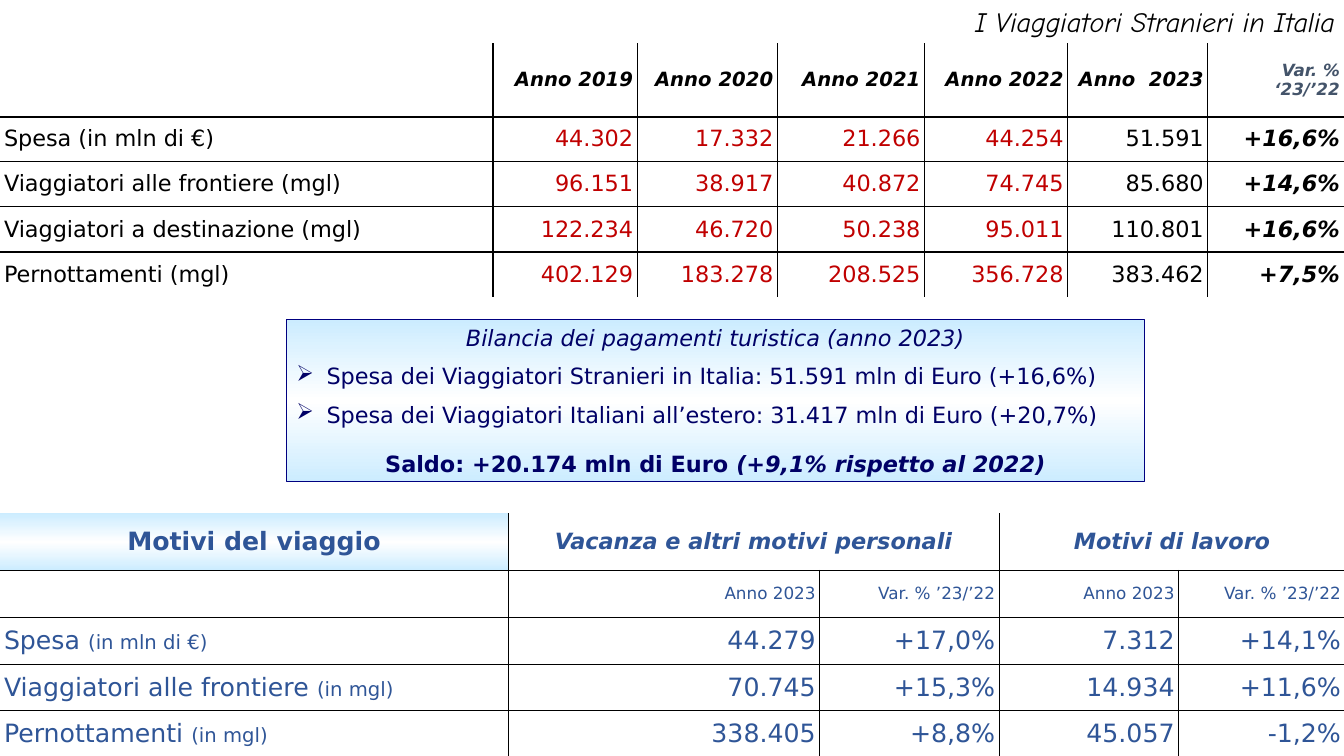
import copy
from dataclasses import dataclass

import lxml.etree
import pptx
import pptx.dml.color
import pptx.enum.shapes
import pptx.enum.text
import pptx.oxml
import pptx.oxml.ns
import pptx.util

Inches, Pt = pptx.util.Inches, pptx.util.Pt
RGB = pptx.dml.color.RGBColor.from_string
ALIGN = pptx.enum.text.PP_ALIGN
ANCHOR = pptx.enum.text.MSO_ANCHOR
FIT = pptx.enum.text.MSO_AUTO_SIZE
qn = pptx.oxml.ns.qn


@dataclass(frozen=True)
class Theme:
    font: str = "DejaVu Sans"
    script: str = "Comic Neue"
    black: str = "000000"
    red: str = "C00000"
    slate: str = "44546A"
    blue: str = "2F5597"
    navy: str = "000066"
    edge: str = "000080"
    pale: str = "CCECFF"
    white: str = "FFFFFF"
    title: int = 20
    large: int = 18
    body: int = 16
    note: int = 14
    small: int = 12
    rule: float = 0.96


T = Theme()
NO_STYLE = "{2D5ABB26-0587-4C30-8999-92F81FD0307C}"


def add_run(para, text, size, color, bold=False, italic=False, name=T.font):
    run = para.add_run()
    run.text = text
    look = {"name": name, "size": Pt(size), "bold": bold, "italic": italic}
    for key, value in look.items():
        setattr(run.font, key, value)
    run.font.color.rgb = RGB(color)


def set_glow(fill, holder):
    """Vertical pale-white-pale gradient."""
    fill.gradient()
    fill.gradient_angle = 270
    stops = next(holder.iter(qn("a:gsLst")))
    stops.insert(1, copy.deepcopy(stops[0]))
    for stop, place, color in zip(fill.gradient_stops, (0, 0.5, 1),
                                  (T.pale, T.white, T.pale)):
        stop.position = place
        stop.color.rgb = RGB(color)


def add_rules(cell, sides):
    """Cell borders on the given sides, a subset of LRTB in that order."""
    props = cell._tc.get_or_add_tcPr()
    for spot, side in enumerate(sides):
        line = pptx.oxml.parse_xml(
            f'<a:ln{side} {pptx.oxml.ns.nsdecls("a")} w="{Pt(T.rule)}">'
            f'<a:solidFill><a:srgbClr val="{T.black}"/></a:solidFill>'
            f'</a:ln{side}>')
        props.insert(spot, line)


def add_grid(slide, box, widths, heights, spans=()):
    """Plain table with inner rules only; spans lists (row, column, width)."""
    frame = slide.shapes.add_table(len(heights), len(widths), *map(Inches, box))
    table = frame.table
    table.first_row = table.horz_banding = False
    next(table._tbl.iter(qn("a:tableStyleId"))).text = NO_STYLE
    for col, width in zip(table.columns, widths):
        col.width = Inches(width)
    for row, height in zip(table.rows, heights):
        row.height = Inches(height)
    for r, c, count in spans:
        table.cell(r, c).merge(table.cell(r, c + count - 1))
    look = {"margin_left": Inches(0.04), "margin_right": Inches(0.04),
            "margin_top": Inches(0.05), "margin_bottom": Inches(0.05),
            "vertical_anchor": ANCHOR.MIDDLE}
    for r in range(len(heights)):
        for c in range(len(widths)):
            cell = table.cell(r, c)
            if cell.is_spanned:
                continue
            for key, value in look.items():
                setattr(cell, key, value)
            cell.fill.background()
            inner = {"L": c > 0, "R": c + cell.span_width < len(widths),
                     "T": r > 0, "B": r + 1 < len(heights)}
            add_rules(cell, [side for side, on in inner.items() if on])
    return table


def write(cell, align, *runs):
    para = cell.text_frame.paragraphs[0]
    para.alignment = align
    for run in runs:
        add_run(para, *run)
    return para


def add_title(slide, box):
    frame = slide.shapes.add_textbox(*map(Inches, box)).text_frame
    frame.word_wrap = True
    frame.auto_size = FIT.SHAPE_TO_FIT_TEXT
    para = frame.paragraphs[0]
    para.alignment = ALIGN.RIGHT
    para.space_before = Pt(10)
    add_run(para, "I Viaggiatori Stranieri in Italia", T.title, T.black,
            italic=True, name=T.script)


def add_years(slide, box):
    """Yearly totals of foreign travel."""
    rows = [
        ("", "Anno 2019", "Anno 2020", "Anno 2021", "Anno 2022", "Anno  2023",
         "Var. % ‘23/’22"),
        ("Spesa (in mln di €)", "44.302", "17.332", "21.266", "44.254",
         "51.591", "+16,6%"),
        ("Viaggiatori alle frontiere (mgl)", "96.151", "38.917", "40.872",
         "74.745", "85.680", "+14,6%"),
        ("Viaggiatori a destinazione (mgl)", "122.234", "46.720", "50.238",
         "95.011", "110.801", "+16,6%"),
        ("Pernottamenti (mgl)", "402.129", "183.278", "208.525", "356.728",
         "383.462", "+7,5%"),
    ]
    table = add_grid(slide, box, (4.89, 1.43, 1.39, 1.46, 1.42, 1.39, 1.35),
                     (0.73, 0.44, 0.45, 0.45, 0.45))
    for r, row in enumerate(rows):
        for c, text in enumerate(row):
            if not text:
                continue
            last, strong = c == 6, r == 0 or c == 6
            if r == 0:
                size, color = (T.small, T.slate) if last else (T.note, T.black)
            else:
                size, color = T.body, T.red if 1 <= c <= 4 else T.black
            write(table.cell(r, c), ALIGN.RIGHT if c else ALIGN.LEFT,
                  (text, size, color, strong, strong))


def add_bullet(para):
    props = para._p.get_or_add_pPr()
    tint = lxml.etree.SubElement(props, qn("a:buClr"))
    lxml.etree.SubElement(tint, qn("a:srgbClr")).set("val", T.navy)
    lxml.etree.SubElement(props, qn("a:buChar")).set("char", "➢")


def add_balance(slide, box):
    """Tourism balance of payments."""
    shape = slide.shapes.add_shape(pptx.enum.shapes.MSO_SHAPE.RECTANGLE,
                                   *map(Inches, box))
    shape.shadow.inherit = False
    set_glow(shape.fill, shape._element.spPr)
    shape.line.color.rgb = RGB(T.edge)
    shape.line.width = Pt(0.75)
    frame = shape.text_frame
    frame.word_wrap = True
    frame.auto_size = FIT.SHAPE_TO_FIT_TEXT
    frame.vertical_anchor = ANCHOR.TOP
    # (bulleted, space before, runs of text, bold, italic)
    lines = [
        (False, 8, [("Bilancia dei pagamenti turistica (anno 2023)", False, True)]),
        (True, 8, [("Spesa dei Viaggiatori Stranieri in Italia: "
                    "51.591 mln di Euro (+16,6%)", False, False)]),
        (True, 8, [("Spesa dei Viaggiatori Italiani all’estero: "
                    "31.417 mln di Euro (+20,7%)", False, False)]),
        (False, 16, [("Saldo: +20.174 mln di Euro ", True, False),
                     ("(+9,1% rispetto al 2022)", True, True)]),
    ]
    for i, (listed, gap, runs) in enumerate(lines):
        para = frame.add_paragraph() if i else frame.paragraphs[0]
        para.alignment = ALIGN.LEFT if listed else ALIGN.CENTER
        para.space_before = Pt(gap)
        props = para._p.get_or_add_pPr()
        props.set("marL", str(Inches(0.3)))
        props.set("indent", str(Inches(-0.3)))
        if listed:
            add_bullet(para)
        for text, bold, italic in runs:
            add_run(para, text, T.body, T.navy, bold, italic)


def add_motives(slide, box):
    """Spending and stays by reason for travel."""
    table = add_grid(slide, box, (5.04, 3.09, 1.78, 1.78, 1.65),
                     (0.57, 0.47, 0.46, 0.46, 0.46), [(0, 1, 2), (0, 3, 2)])
    # Headings
    head = table.cell(0, 0)
    set_glow(head.fill, head._tc.tcPr)
    para = write(head, ALIGN.CENTER,
                 ("Motivi del viaggio", T.large, T.blue, True))
    para.space_before = Pt(3.6)
    for c, text in ((1, "Vacanza e altri motivi personali"),
                    (3, "Motivi di lavoro")):
        write(table.cell(0, c), ALIGN.CENTER, (text, T.body, T.blue, True, True))
    for c, text in enumerate(("Anno 2023", "Var. % ’23/’22") * 2, 1):
        write(table.cell(1, c), ALIGN.RIGHT, (text, T.small, T.blue))
    # Values
    rows = [
        ("Spesa ", "(in mln di €)", "44.279", "+17,0%", "7.312", "+14,1%"),
        ("Viaggiatori alle frontiere ", "(in mgl)", "70.745", "+15,3%",
         "14.934", "+11,6%"),
        ("Pernottamenti ", "(in mgl)", "338.405", "+8,8%", "45.057", "-1,2%"),
    ]
    for r, (label, unit, *values) in enumerate(rows, 2):
        write(table.cell(r, 0), ALIGN.LEFT, (label, T.large, T.blue),
              (unit, T.note, T.blue))
        for c, text in enumerate(values, 1):
            write(table.cell(r, c), ALIGN.RIGHT, (text, T.large, T.blue))


def main():
    deck = pptx.Presentation()
    deck.slide_width, deck.slide_height = Inches(13.33), Inches(7.5)
    slide = deck.slides.add_slide(deck.slide_layouts[6])
    add_years(slide, (0, 0.43, 13.33, 2.53))
    add_title(slide, (8.92, 0, 4.42, 0.43))
    add_balance(slide, (2.84, 3.17, 8.51, 1.61))
    add_motives(slide, (0, 5.09, 13.33, 2.41))
    deck.save("out.pptx")


if __name__ == "__main__":
    main()
